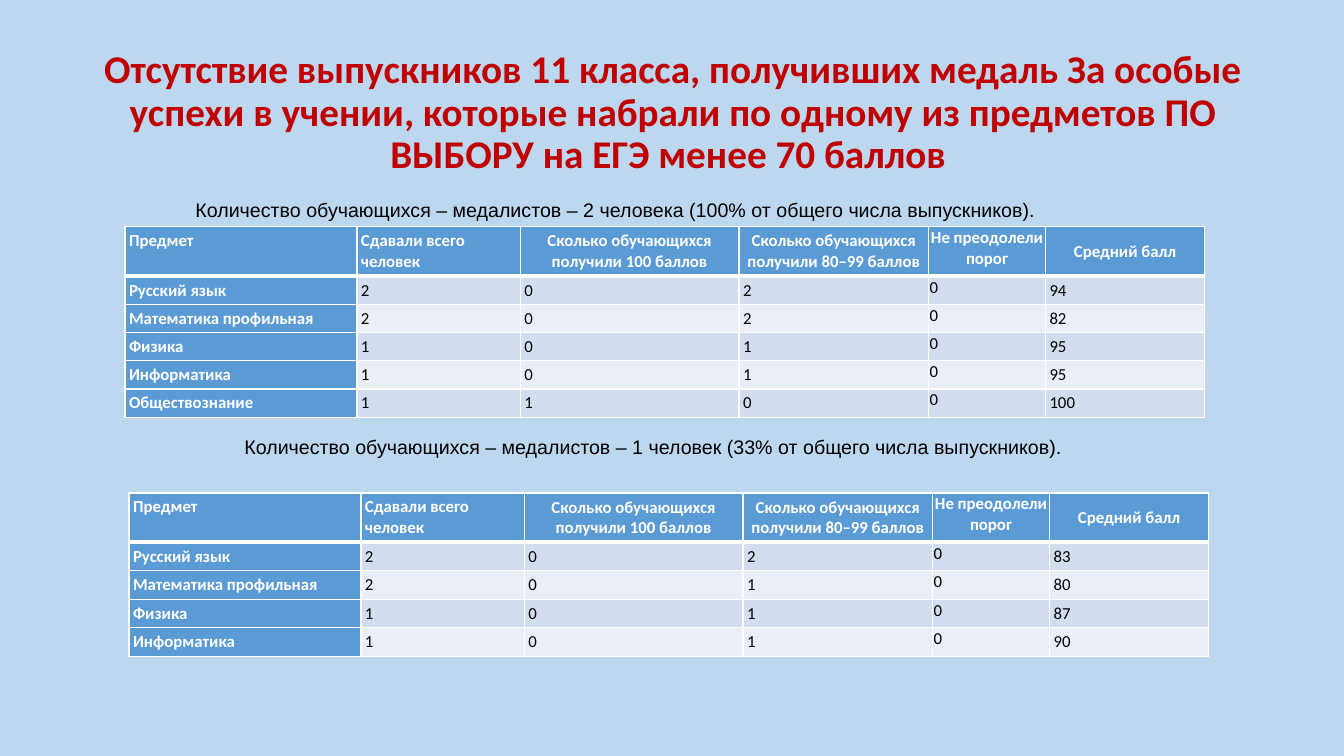
from copy import deepcopy

from lxml import etree
from pptx import Presentation
from pptx import util as u
from pptx.dml.color import RGBColor
from pptx.enum import text
from pptx.oxml.ns import qn

COLORS = {"back": "BDD7EE", "title": "C00000", "head": "5B9BD5", "odd": "D2DEEF",
          "even": "EAEFF7", "white": "FFFFFF", "black": "000000"}
LEFT, CENTER = text.PP_ALIGN.LEFT, text.PP_ALIGN.CENTER
TOP, MIDDLE = text.MSO_ANCHOR.TOP, text.MSO_ANCHOR.MIDDLE

COLUMN_WIDTHS = [2.3, 1.62, 2.17, 1.88, 1.16, 1.58]
THRESHOLD_COLUMN = 4
HEADERS = [
    ("Предмет", LEFT, TOP),
    ("Сдавали всего \nчеловек", LEFT, TOP),
    ("Сколько обучающихся\nполучили 100 баллов", CENTER, MIDDLE),
    ("Сколько обучающихся\nполучили 80–99 баллов", CENTER, MIDDLE),
    ("Не преодолели порог", CENTER, TOP),
    ("Средний балл", CENTER, MIDDLE),
]
FIRST_RESULTS = [
    ("Русский язык", 2, 0, 2, 0, 94),
    ("Математика профильная", 2, 0, 2, 0, 82),
    ("Физика", 1, 0, 1, 0, 95),
    ("Информатика", 1, 0, 1, 0, 95),
    ("Обществознание", 1, 1, 0, 0, 100),
]
SECOND_RESULTS = [
    ("Русский язык", 2, 0, 2, 0, 83),
    ("Математика профильная", 2, 0, 1, 0, 80),
    ("Физика", 1, 0, 1, 0, 87),
    ("Информатика", 1, 0, 1, 0, 90),
]


def rgb(name):
    return RGBColor.from_string(COLORS[name])


def write(frame, words, size=12, font="Calibri", color="black", bold=False,
          align=LEFT, anchor=TOP, spacing=None):
    frame.word_wrap = True
    frame.vertical_anchor = anchor
    para = frame.paragraphs[0]
    para.text = words
    para.alignment = align
    para.line_spacing = spacing
    for span in para.runs:
        span.font.size = u.Pt(size)
        span.font.name = font
        span.font.bold = bold
        span.font.color.rgb = rgb(color)
    for line_break in para._p.findall(qn("a:br")):
        line_break.append(deepcopy(para.runs[0]._r.rPr))


class Page:
    def __init__(self, deck):
        self.slide = deck.slides.add_slide(deck.slide_layouts[5])
        self.slide.background.fill.solid()
        self.slide.background.fill.fore_color.rgb = rgb("back")

    def title(self, words, left, top, width, height):
        box = self.slide.shapes.title
        box.left, box.top = u.Inches(left), u.Inches(top)
        box.width, box.height = u.Inches(width), u.Inches(height)
        box.text_frame.auto_size = text.MSO_AUTO_SIZE.NONE
        write(box.text_frame, words, size=28, color="title", bold=True,
              align=CENTER, anchor=MIDDLE, spacing=0.9)

    def caption(self, words, left, top, width, height):
        box = self.slide.shapes.add_textbox(
            u.Inches(left), u.Inches(top), u.Inches(width), u.Inches(height))
        write(box.text_frame, words, size=14, font="Arial", align=CENTER)

    def borders(self, cell, top, bottom):
        widths = {"a:lnL": 1, "a:lnR": 1, "a:lnT": top, "a:lnB": bottom}
        for place, (tag, width) in enumerate(widths.items()):
            line = etree.Element(qn(tag), w=str(u.Pt(width)))
            fill = etree.SubElement(line, qn("a:solidFill"))
            etree.SubElement(fill, qn("a:srgbClr"), val=COLORS["white"])
            cell._tc.get_or_add_tcPr().insert(place, line)

    def cell(self, cell, words, row, column, **style):
        margin = u.Inches(0.01 if column == THRESHOLD_COLUMN else 0.04)
        cell.margin_left = cell.margin_right = margin
        cell.margin_top = cell.margin_bottom = margin
        heading = row == 0 or column == 0
        band = "head" if heading else "odd" if row % 2 else "even"
        cell.fill.solid()
        cell.fill.fore_color.rgb = rgb(band)
        anchor = style.pop("anchor", TOP)
        write(cell.text_frame, words, bold=heading,
              color="white" if heading else "black", **style)
        cell.vertical_anchor = anchor
        self.borders(cell, 3 if row == 1 else 1, 3 if row == 0 else 1)

    def table(self, results, left, top):
        heights = [0.49] + [0.28] * len(results)
        table = self.slide.shapes.add_table(
            len(heights), len(HEADERS), u.Inches(left), u.Inches(top),
            u.Inches(sum(COLUMN_WIDTHS)), u.Inches(sum(heights))).table
        for column, width in enumerate(COLUMN_WIDTHS):
            table.columns[column].width = u.Inches(width)
        for row, height in enumerate(heights):
            table.rows[row].height = u.Inches(height)
        for column, (words, align, anchor) in enumerate(HEADERS):
            self.cell(table.cell(0, column), words, 0, column, align=align, anchor=anchor)
        for row, values in enumerate(results, 1):
            for column, value in enumerate(values):
                self.cell(table.cell(row, column), str(value), row, column)


def main():
    deck = Presentation()
    deck.slide_width, deck.slide_height = u.Inches(13.33), u.Inches(7.5)
    page = Page(deck)
    page.title("Отсутствие выпускников 11 класса, получивших медаль За особые успехи "
               "в учении, которые набрали по одному из предметов ПО ВЫБОРУ на ЕГЭ "
               "менее 70 баллов ", 0.92, 0.4, 11.5, 1.45)
    page.table(SECOND_RESULTS, 1.28, 4.89)
    page.caption("Количество обучающихся – медалистов – 1 человек "
                 "(33% от общего числа выпускников).", 1.79, 4.27, 9.38, 0.54)
    page.table(FIRST_RESULTS, 1.24, 2.25)
    page.caption("Количество обучающихся – медалистов – 2 человека "
                 "(100% от общего числа выпускников).", 1.79, 1.91, 8.63, 0.34)
    deck.save("out.pptx")


if __name__ == "__main__":
    main()
